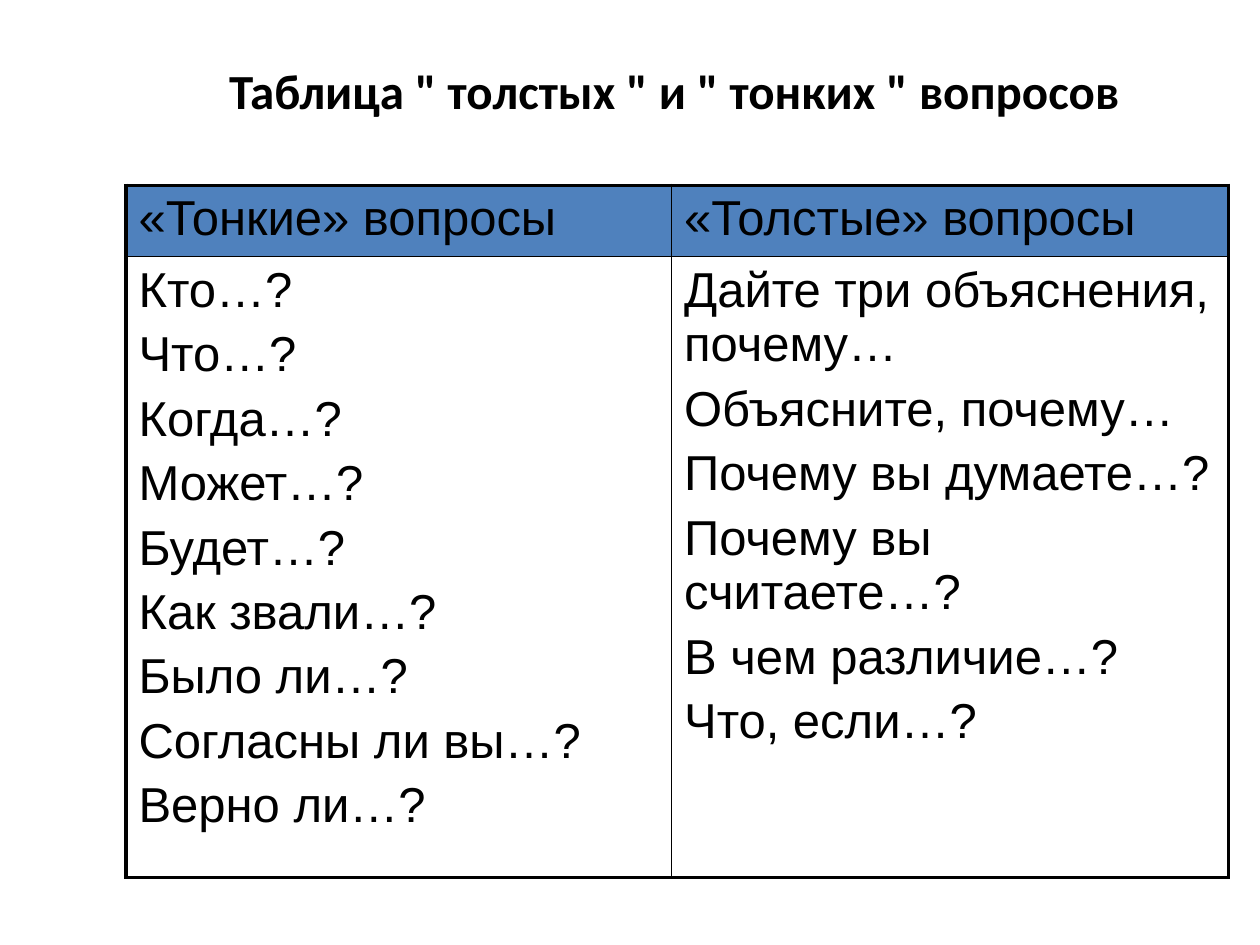
from lxml.etree import SubElement
from pptx import Presentation
from pptx.dml.color import RGBColor
from pptx.enum.text import MSO_ANCHOR, PP_ALIGN
from pptx.oxml.ns import qn
from pptx.util import Inches, Pt

TITLE = 'Таблица " толстых " и " тонких " вопросов'
QUESTIONS = {
    "«Тонкие» вопросы": [
        "Кто…?", "Что…?", "Когда…?", "Может…?", "Будет…?", "Как звали…?",
        "Было ли…?", "Согласны ли вы…?", "Верно ли…?",
    ],
    "«Толстые» вопросы": [
        "Дайте три объяснения, почему…", "Объясните, почему…",
        "Почему вы думаете…?", "Почему вы считаете…?",
        "В чем различие…?", "Что, если…?",
    ],
}


def rgb(value):
    return RGBColor.from_string(value)


class QuestionSlide:
    ink = "000000"
    header_fill = "4F81BD"
    outer_border = 2.25
    inner_border = 1
    title_font = {"name": "Calibri", "size": Pt(28), "bold": True}
    table_font = {"name": "Arial", "size": Pt(28), "bold": False}
    paragraph_gap = Pt(5.6)

    def __init__(self, presentation):
        self.slide = presentation.slides.add_slide(presentation.slide_layouts[6])

    def format(self, paragraph, values):
        for name, value in values.items():
            setattr(paragraph.font, name, value)
        paragraph.font.color.rgb = rgb(self.ink)

    def title(self, text, left, top, width, height):
        frame = self.slide.shapes.add_textbox(
            Inches(left), Inches(top), Inches(width), Inches(height)).text_frame
        frame.word_wrap = True
        frame.vertical_anchor = MSO_ANCHOR.MIDDLE
        paragraph = frame.paragraphs[0]
        paragraph.text = text
        paragraph.alignment = PP_ALIGN.CENTER
        self.format(paragraph, self.title_font)

    def borders(self, cell, outer_sides):
        """Draw all four cell edges, thicker on the outer sides."""
        properties = cell._tc.get_or_add_tcPr()
        for position, side in enumerate("LRTB"):
            points = self.outer_border if side in outer_sides else self.inner_border
            line = SubElement(properties, qn(f"a:ln{side}"), w=str(Pt(points)))
            fill = SubElement(line, qn("a:solidFill"))
            SubElement(fill, qn("a:srgbClr"), val=self.ink)
            properties.insert(position, line)

    def fill_cell(self, cell, lines, is_header):
        if is_header:
            cell.fill.solid()
            cell.fill.fore_color.rgb = rgb(self.header_fill)
        else:
            cell.fill.background()
        cell.text = "\n".join(lines)
        for index, paragraph in enumerate(cell.text_frame.paragraphs):
            if index:
                paragraph.space_before = self.paragraph_gap
            self.format(paragraph, self.table_font)

    def table(self, questions, left, top, widths, heights):
        table = self.slide.shapes.add_table(
            len(heights), len(widths), Inches(left), Inches(top),
            Inches(sum(widths)), Inches(sum(heights))).table
        table.first_row = table.horz_banding = False
        for row, height in zip(table.rows, heights):
            row.height = Inches(height)
        for column, width in zip(table.columns, widths):
            column.width = Inches(width)
        for column, (heading, lines) in enumerate(questions.items()):
            for row, content in enumerate(([heading], lines)):
                cell = table.cell(row, column)
                self.fill_cell(cell, content, is_header=row == 0)
                self.borders(cell, "LR"[column] + "TB"[row])


def main():
    presentation = Presentation()
    presentation.slide_width = Inches(10)
    presentation.slide_height = Inches(7.5)
    slide = QuestionSlide(presentation)
    slide.title(TITLE, 0.7, 0.32, 9.3, 0.79)
    slide.table(QUESTIONS, 1, 1.47, widths=(4.33, 4.42), heights=(0.53, 4.62))
    presentation.save("out.pptx")


if __name__ == "__main__":
    main()
